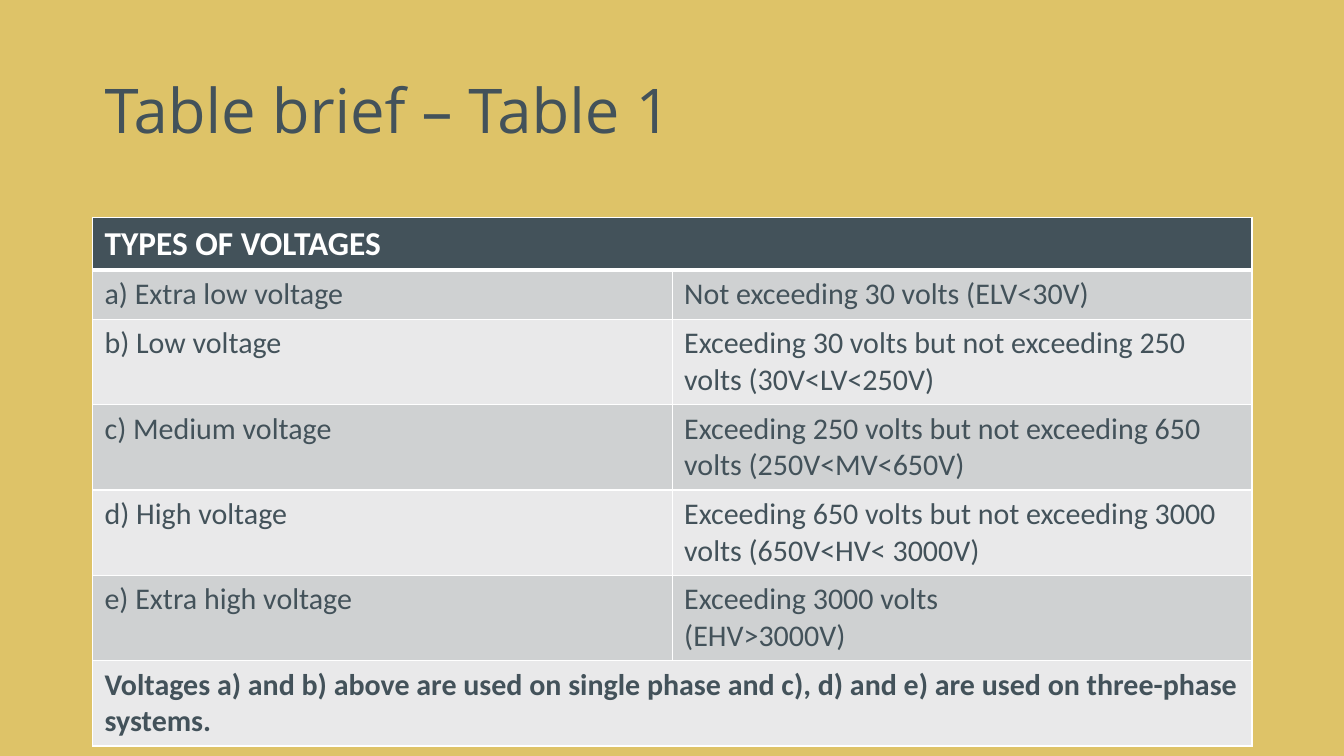
import pptx
import pptx.dml.color
import pptx.enum.text
import pptx.oxml
import pptx.oxml.ns
import pptx.util

Cm = pptx.util.Cm
Pt = pptx.util.Pt

COLORS = {
    "background": "DEC368",
    "slate": "43525A",
    "white": "FFFFFF",
    "band_dark": "CFD1D2",
    "band_light": "E9E9EA",
}
LEFT, WIDTH = Cm(1.96), Cm(24.54)
ROW_HEIGHT = Cm(1.04)
HEADING = "TYPES OF VOLTAGES"
VOLTAGES = [
    ("a) Extra low voltage", "Not exceeding 30 volts (ELV<30V)"),
    ("b) Low voltage", "Exceeding 30 volts but not exceeding 250 volts (30V<LV<250V)"),
    ("c) Medium voltage", "Exceeding 250 volts but not exceeding 650 volts (250V<MV<650V)"),
    ("d) High voltage", "Exceeding 650 volts but not exceeding 3000 volts (650V<HV< 3000V)"),
    ("e) Extra high voltage", "Exceeding 3000 volts\n(EHV>3000V)"),
]
FOOTNOTE = (
    "Voltages a) and b) above are used on single phase and c), d) and e) "
    "are used on three-phase systems."
)


def rgb(name):
    return pptx.dml.color.RGBColor.from_string(COLORS[name])


def format_text(tf, font, size, color, bold=False):
    for p in tf.paragraphs:
        for r in p.runs:
            r.font.name = font
            r.font.size = Pt(size)
            r.font.bold = bold
            r.font.color.rgb = rgb(color)


def add_title(slide, text):
    sp = slide.shapes.title
    sp.left, sp.top, sp.width, sp.height = LEFT, Cm(0.86), WIDTH, Cm(3.1)
    tf = sp.text_frame
    tf.text = text
    tf.auto_size = pptx.enum.text.MSO_AUTO_SIZE.NONE
    tf.vertical_anchor = pptx.enum.text.MSO_ANCHOR.MIDDLE
    p = tf.paragraphs[0]
    p.alignment = pptx.enum.text.PP_ALIGN.LEFT
    p.line_spacing = 0.9
    format_text(tf, "Open Sans", 37, "slate")


def set_borders(cell, top=1, bottom=1):
    tcPr = cell._tc.get_or_add_tcPr()
    for side, width in (("L", 1), ("R", 1), ("T", top), ("B", bottom)):
        tcPr.append(pptx.oxml.parse_xml(
            f'<a:ln{side} {pptx.oxml.ns.nsdecls("a")} w="{Pt(width)}">'
            f'<a:solidFill><a:srgbClr val="{COLORS["white"]}"/></a:solidFill>'
            f'</a:ln{side}>'
        ))


def fill_cell(cell, text, row, heading=False, bold=False):
    set_borders(cell, top=3 if row == 1 else 1, bottom=3 if heading else 1)
    band = "band_dark" if row % 2 else "band_light"
    cell.fill.solid()
    cell.fill.fore_color.rgb = rgb("slate" if heading else band)
    cell.text_frame.text = text
    format_text(cell.text_frame, "Calibri", 20 if heading else 18,
                "white" if heading else "slate", bold)


def add_voltage_table(slide):
    rows = [(HEADING, ""), *VOLTAGES, (FOOTNOTE, "")]
    last = len(rows) - 1
    table = slide.shapes.add_table(
        len(rows), 2, LEFT, Cm(4.6), WIDTH, ROW_HEIGHT * len(rows)).table
    for i, texts in enumerate(rows):
        table.rows[i].height = ROW_HEIGHT
        spanning = i in (0, last)
        for j, text in enumerate(texts):
            fill_cell(table.cell(i, j), text, i, heading=i == 0, bold=spanning)
        if spanning:
            table.cell(i, 0).merge(table.cell(i, 1))


def main():
    prs = pptx.Presentation()
    prs.slide_width, prs.slide_height = Cm(28.45), Cm(16)
    slide = prs.slides.add_slide(prs.slide_layouts[5])
    slide.background.fill.solid()
    slide.background.fill.fore_color.rgb = rgb("background")
    add_title(slide, "Table brief – Table 1")
    add_voltage_table(slide)
    prs.save("out.pptx")


if __name__ == "__main__":
    main()
